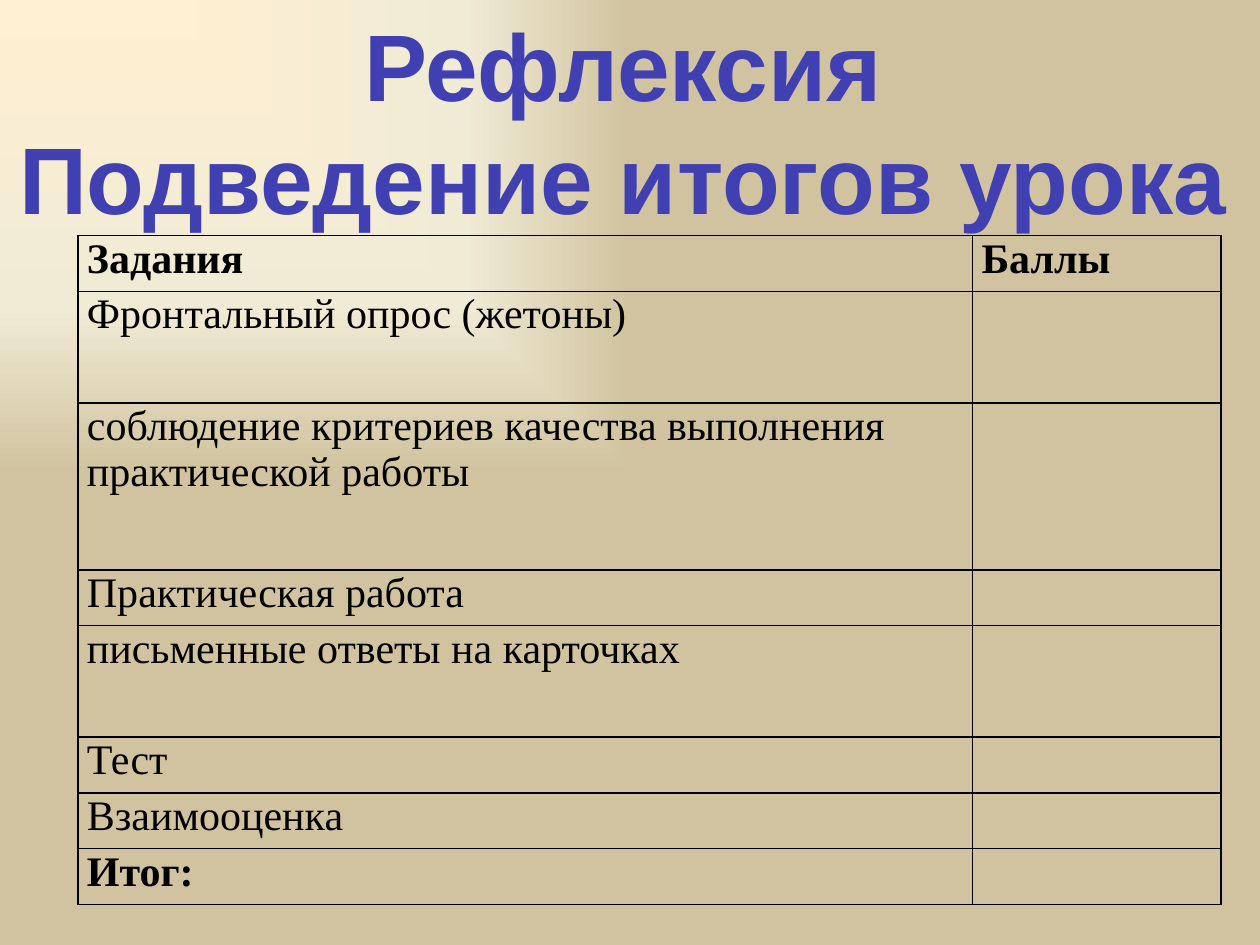
"""Build a lesson reflection slide with a score table."""
from lxml import etree
from pptx import Presentation
from pptx.dml.color import RGBColor
from pptx.enum.text import MSO_AUTO_SIZE, PP_ALIGN
from pptx.oxml import parse_xml
from pptx.oxml.ns import nsdecls, qn
from pptx.util import Inches, Pt

CENTER = PP_ALIGN.CENTER
GROW = MSO_AUTO_SIZE.SHAPE_TO_FIT_TEXT

TITLE = ["Рефлексия", "Подведение итогов урока"]
HEADS = ["Задания", "Баллы"]
TASKS = [
    ("Фронтальный опрос (жетоны)", 2),
    ("соблюдение критериев качества выполнения практической работы", 3),
    ("Практическая работа", 1),
    ("письменные ответы на карточках", 2),
    ("Тест", 1),
    ("Взаимооценка", 1),
]
TOTAL = "Итог:"
ROWS = [(HEADS, 1, True)]
ROWS += [([task, ""], span, False) for task, span in TASKS]
ROWS += [([TOTAL, ""], 1, True)]

WIDE, HIGH = 10, 7.5
LEFT, TOP = 0.62, 1.87
COLS = [7.1, 1.97]
UNIT = 5.31 / sum(span for _, span, _ in ROWS)
INK = "000000"
SAND = [(0, "FFEFD1"), (65, "F0EBD5"), (100, "D1C39F")]
BLUE = [(0, "00005B"), (78, "4040B3"), (100, "EFEFF7")]
CORNER = '<a:path path="rect"><a:fillToRect r="100000" b="100000"/></a:path>'
DOWN = '<a:lin ang="5400000" scaled="1"/>'


def color(code):
    return RGBColor.from_string(code)


def blend(host, stops, shade):
    """Swap the solid fill inside host for a gradient."""
    marks = "".join(
        f'<a:gs pos="{pos * 1000}"><a:srgbClr val="{code}"/></a:gs>'
        for pos, code in stops)
    grad = parse_xml(f'<a:gradFill {nsdecls("a")} rotWithShape="1">'
                     f'<a:gsLst>{marks}</a:gsLst>{shade}</a:gradFill>')
    host.replace(host.find(qn("a:solidFill")), grad)


def write(para, text, face, size, code, bold):
    run = para.add_run()
    run.text = text
    font = run.font
    font.name, font.size, font.bold = face, Pt(size), bold
    font.color.rgb = color(code)
    return run


def frame(cell):
    """Draw thin lines on all four sides of a cell."""
    props = cell._tc.get_or_add_tcPr()
    for spot, side in enumerate("LRTB"):
        line = etree.Element(qn(f"a:ln{side}"), w=str(Pt(1)))
        fill = etree.SubElement(line, qn("a:solidFill"))
        etree.SubElement(fill, qn("a:srgbClr"), val=INK)
        props.insert(spot, line)


def add_title(slide):
    box = slide.shapes.add_textbox(0, 0, Inches(9.89), Inches(1.92))
    body = box.text_frame
    body.word_wrap, body.auto_size = False, GROW
    for index, text in enumerate(TITLE):
        para = body.add_paragraph() if index else body.paragraphs[0]
        para.alignment, para.line_spacing = CENTER, Pt(65)
        run = write(para, text, "Arial", 54, BLUE[1][1], True)
        blend(run.font._element, BLUE, DOWN)


def add_scores(slide):
    table = slide.shapes.add_table(
        len(ROWS), len(COLS), Inches(LEFT), Inches(TOP),
        Inches(sum(COLS)), Inches(5.31)).table
    table.first_row = table.horz_banding = False
    for col, width in zip(table.columns, COLS):
        col.width = Inches(width)
    for row, (texts, span, bold) in zip(table.rows, ROWS):
        row.height = Inches(UNIT * span)
        for cell, text in zip(row.cells, texts):
            cell.fill.background()
            cell.margin_left = cell.margin_right = Inches(0.07)
            cell.margin_top = cell.margin_bottom = 0
            frame(cell)
            if text:
                write(cell.text_frame.paragraphs[0], text,
                      "Times New Roman", 24, INK, bold)


def main():
    deck = Presentation()
    deck.slide_width, deck.slide_height = Inches(WIDE), Inches(HIGH)
    slide = deck.slides.add_slide(deck.slide_layouts[6])
    back = slide.background.fill
    back.solid()
    back.fore_color.rgb = color(SAND[-1][1])
    blend(slide.element.xpath(".//p:bgPr")[0], SAND, CORNER)
    add_title(slide)
    add_scores(slide)
    deck.save("out.pptx")


if __name__ == "__main__":
    main()
